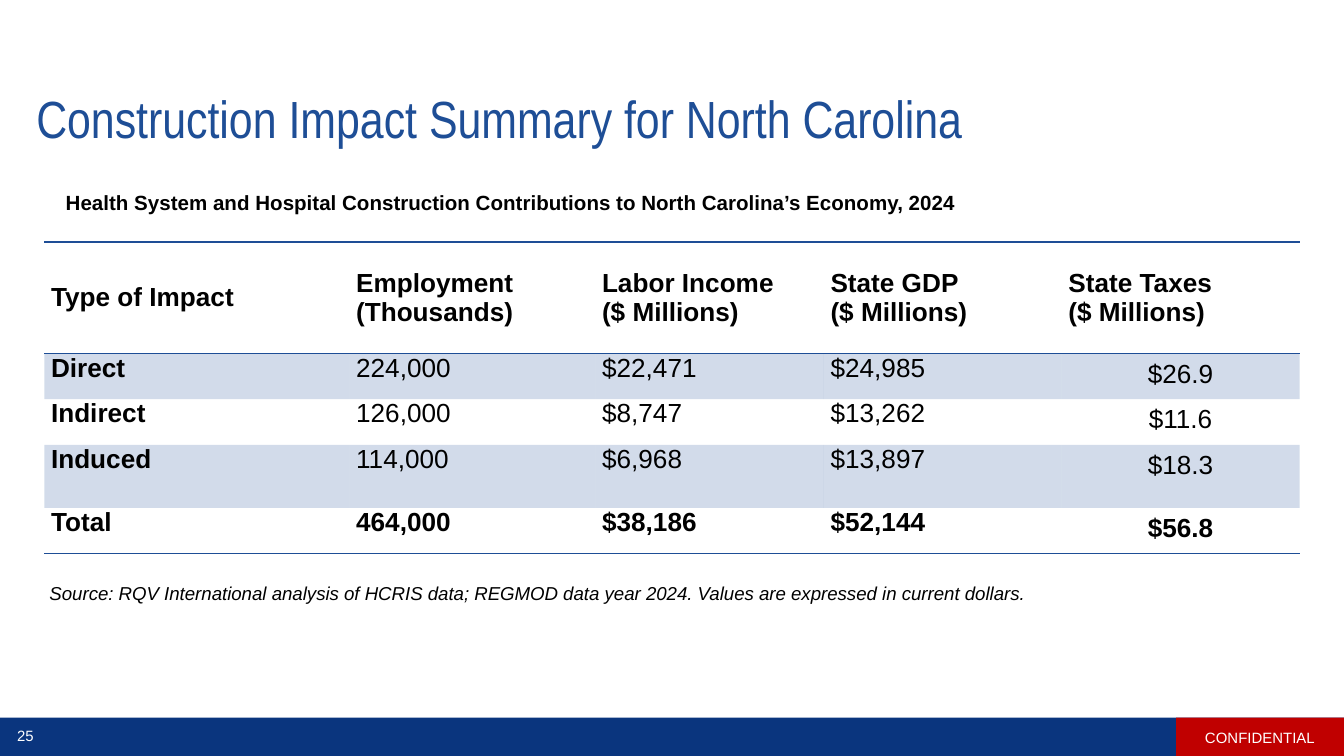
from lxml import etree
from pptx import Presentation
from pptx import util as u
from pptx.dml.color import RGBColor
from pptx.enum import shapes, text
from pptx.oxml import ns

# Content
TITLE = "Construction Impact Summary for North Carolina"
CAPTION = "Health System and Hospital Construction Contributions to North Carolina’s Economy, 2024"
SOURCE = ("Source: RQV International analysis of HCRIS data; REGMOD data year 2024. "
          "Values are expressed in current dollars.")
PAGE, MARKING = "25", "CONFIDENTIAL"
ROWS = [
    ("Type of Impact", "Employment (Thousands)", "Labor Income\v($ Millions)",
     "State GDP\v($ Millions)", "State Taxes\v($ Millions)"),
    ("Direct", "224,000", "$22,471", "$24,985", "$26.9"),
    ("Indirect", "126,000", "$8,747", "$13,262", "$11.6"),
    ("Induced", "114,000", "$6,968", "$13,897", "$18.3"),
    ("Total", "464,000", "$38,186", "$52,144", "$56.8"),
]

# Theme and layout, in inches and points
THEME = {"blue": "1E4E96", "navy": "0A357E", "red": "C00000", "black": "000000",
         "white": "FFFFFF", "title": 28, "table": 14, "caption": 11, "source": 10, "footer": 8}
WIDTH = 10
HEIGHT = WIDTH * 9 / 16
COLUMN_WIDTHS = (2.27, 1.83, 1.7, 1.77, 1.77)
ROW_HEIGHTS = (0.83, 0.34, 0.34, 0.47, 0.34)
TABLE_LEFT, TABLE_TOP = 0.33, 1.8
FOOTER_TOP, FOOTER_HEIGHT, MARKING_WIDTH = 5.34, 0.29, 1.25
BAND_ALPHA = 20
NO_STYLE = "{2D5ABB26-0587-4C30-8999-92F81FD0307C}"


def inches(*values):
    return [u.Inches(value) for value in values]


def color(name):
    return RGBColor.from_string(THEME[name])


def set_all(target, values):
    for name, value in values.items():
        setattr(target, name, value)


def write(frame, words, size, ink="black", font="Arial", align="LEFT", **styles):
    frame.text = words
    paragraph = frame.paragraphs[0]
    paragraph.alignment = getattr(text.PP_ALIGN, align)
    for run in paragraph.runs:
        set_all(run.font, {"size": u.Pt(THEME[size]), "name": font, **styles})
        run.font.color.rgb = color(ink)
    return paragraph


def add_text(slide, box, words, size, **styles):
    frame = slide.shapes.add_textbox(*inches(*box)).text_frame
    set_all(frame, {"word_wrap": True, "vertical_anchor": text.MSO_ANCHOR.MIDDLE})
    write(frame, words, size, **styles)


def add_bar(slide, box, fill):
    bar = slide.shapes.add_shape(shapes.MSO_SHAPE.RECTANGLE, *inches(*box))
    bar.shadow.inherit = False
    bar.fill.solid()
    bar.fill.fore_color.rgb = color(fill)
    bar.line.fill.background()
    return bar


def add_border(cell, side):
    line = etree.SubElement(cell._tc.get_or_add_tcPr(), ns.qn(f"a:ln{side}"), w=str(u.Pt(1)))
    fill = etree.SubElement(line, ns.qn("a:solidFill"))
    etree.SubElement(fill, ns.qn("a:srgbClr"), val=THEME["blue"])


def fill_band(cell):
    cell.fill.solid()
    cell.fill.fore_color.rgb = color("blue")
    tint = cell._tc.tcPr.find(".//" + ns.qn("a:srgbClr"))
    etree.SubElement(tint, ns.qn("a:alpha"), val=str(BAND_ALPHA * 1000))


def add_impact_table(slide):
    box = (TABLE_LEFT, TABLE_TOP, sum(COLUMN_WIDTHS), sum(ROW_HEIGHTS))
    table = slide.shapes.add_table(len(ROWS), len(COLUMN_WIDTHS), *inches(*box)).table
    set_all(table, {"first_row": False, "horz_banding": False})
    table._tbl.tblPr.find(ns.qn("a:tableStyleId")).text = NO_STYLE
    for column, width in zip(table.columns, COLUMN_WIDTHS):
        column.width = u.Inches(width)
    for row, height in zip(table.rows, ROW_HEIGHTS):
        row.height = u.Inches(height)

    last_row, last_column = len(ROWS) - 1, len(COLUMN_WIDTHS) - 1
    for r, values in enumerate(ROWS):
        header = r == 0
        for c, value in enumerate(values):
            cell = table.cell(r, c)
            taxes = c == last_column and not header
            side = u.Inches(0.06 if taxes else 0.05)
            anchor = text.MSO_ANCHOR.MIDDLE if header else text.MSO_ANCHOR.TOP
            set_all(cell, {"margin_left": side, "margin_right": side, "margin_top": 0,
                           "margin_bottom": 0, "vertical_anchor": anchor})
            paragraph = write(cell.text_frame, value, "table",
                              align="CENTER" if taxes else "LEFT",
                              bold=r in (0, last_row) or c == 0)
            if taxes:
                paragraph.line_spacing = 1.2
            if header:
                add_border(cell, "T")
            if r in (0, last_row):
                add_border(cell, "B")
            if r % 2:
                fill_band(cell)
            else:
                cell.fill.background()


def main():
    presentation = Presentation()
    set_all(presentation, {"slide_width": u.Inches(WIDTH), "slide_height": u.Inches(HEIGHT)})
    slide = presentation.slides.add_slide(presentation.slide_layouts[5])

    # Footer
    add_bar(slide, (0, FOOTER_TOP, WIDTH, FOOTER_HEIGHT), "navy")
    add_text(slide, (0, 5.35, 0.38, 0.24), PAGE, "footer", ink="white", align="CENTER")
    marking = add_bar(slide, (WIDTH - MARKING_WIDTH, FOOTER_TOP, MARKING_WIDTH, FOOTER_HEIGHT), "red")
    write(marking.text_frame, MARKING, "footer", ink="white", align="CENTER")

    # Title
    title = slide.shapes.title
    set_all(title, dict(zip(("left", "top", "width", "height"), inches(0.17, 0.59, 9.67, 0.63))))
    margins = dict(zip(("margin_left", "margin_top", "margin_right", "margin_bottom"),
                       inches(0.1, 0.1, 0.2, 0.1)))
    set_all(title.text_frame, {"word_wrap": True, "auto_size": text.MSO_AUTO_SIZE.NONE,
                               "vertical_anchor": text.MSO_ANCHOR.MIDDLE, **margins})
    write(title.text_frame, TITLE, "title", ink="blue", font="Arial Narrow").line_spacing = 0.9

    # Table with its caption and source
    add_impact_table(slide)
    add_text(slide, (0.39, 1.36, 9.61, 0.29), CAPTION, "caption", bold=True)
    add_text(slide, (0.27, 4.28, 9.56, 0.27), SOURCE, "source", italic=True)
    presentation.save("out.pptx")


if __name__ == "__main__":
    main()
